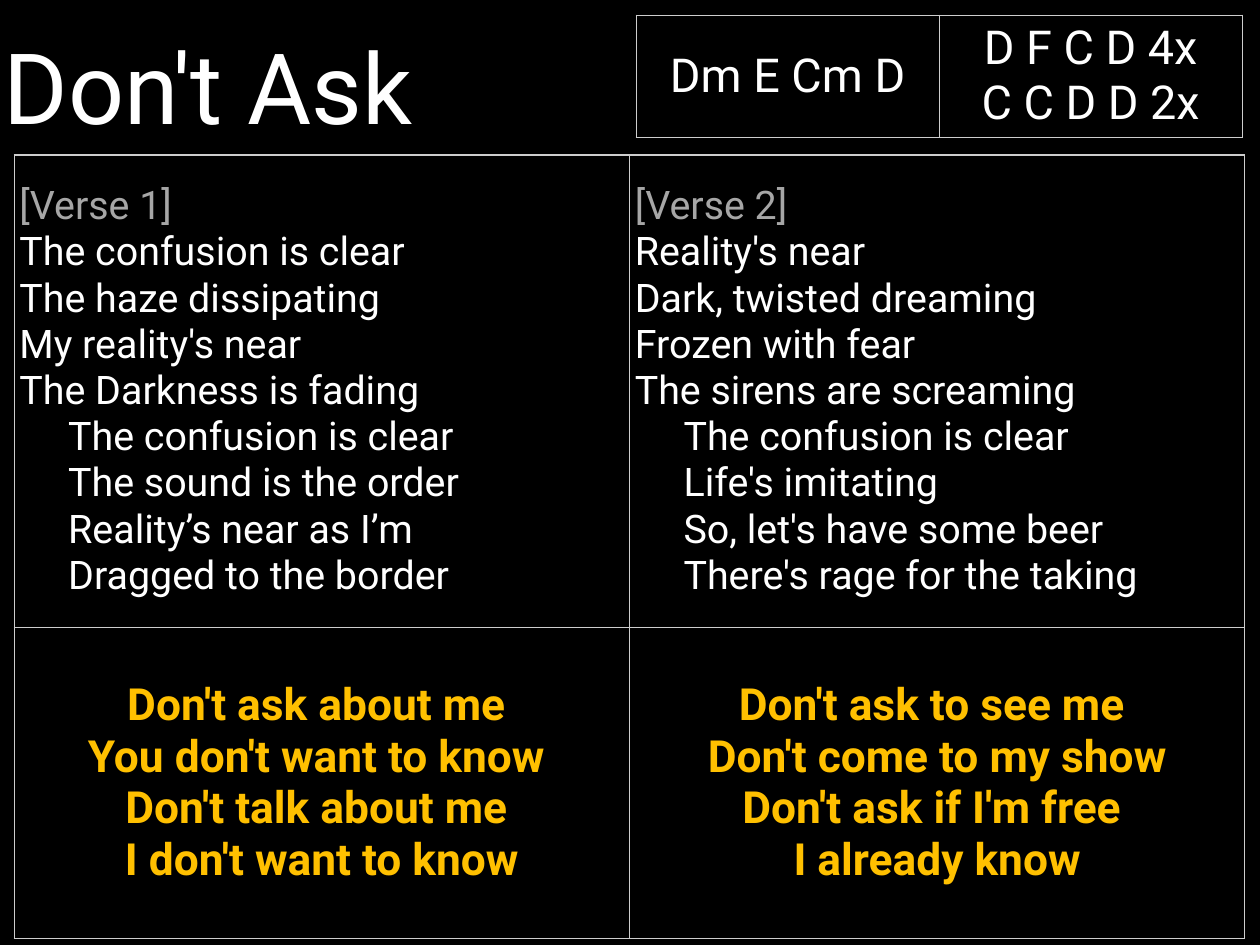
from dataclasses import dataclass
from lxml.etree import SubElement
from pptx import Presentation
from pptx.dml.color import RGBColor as RGB
from pptx.enum.text import MSO_ANCHOR as Anchor, MSO_AUTO_SIZE as Fit, PP_ALIGN as Align
from pptx.oxml.ns import qn
from pptx.util import Inches, Pt


@dataclass(frozen=True)
class Style:
    size: int
    color: str = "FFFFFF"
    bold: bool = False
    align: Align = Align.LEFT
    indent: float = 0


@dataclass(frozen=True)
class Theme:
    font: str = "Roboto"
    back: str = "000000"
    rule: str = "CDCDCD"
    rule_width: float = 1
    pad: float = 0.06
    title: Style = Style(80)
    chord: Style = Style(38, align=Align.CENTER)
    label: Style = Style(32, "A6A6A6")
    verse: Style = Style(32)
    echo: Style = Style(32, indent=0.55)
    chorus: Style = Style(36, "FFC000", True, Align.CENTER)


class Sheet:
    def __init__(self, slide, theme):
        self.slide, self.theme = slide, theme
        fill = slide.background.fill
        fill.solid()
        fill.fore_color.rgb = RGB.from_string(theme.back)

    def lyrics(self, frame, parts):
        """Fill a text frame from (style, lines) parts, one paragraph a line."""
        rows = [(style, line) for style, lines in parts for line in lines]
        frame.text = "\n".join(line for _, line in rows)
        for para, (style, _) in zip(frame.paragraphs, rows):
            para.alignment = style.align
            if style.indent:
                para._p.get_or_add_pPr().set("marL", str(Inches(style.indent)))
            for run in para.runs:
                font = run.font
                font.name, font.size, font.bold = self.theme.font, Pt(style.size), style.bold
                font.color.rgb = RGB.from_string(style.color)

    def title(self, text, left, top, width, height):
        box = self.slide.shapes.title
        box.left, box.top = Inches(left), Inches(top)
        box.width, box.height = Inches(width), Inches(height)
        frame = box.text_frame
        frame.margin_left = frame.margin_right = frame.margin_top = frame.margin_bottom = 0
        frame.word_wrap, frame.auto_size = True, Fit.NONE
        frame.vertical_anchor = Anchor.MIDDLE
        self.lyrics(frame, [(self.theme.title, [text])])

    def border(self, cell):
        props = cell._tc.get_or_add_tcPr()
        for spot, side in enumerate(("lnL", "lnR", "lnT", "lnB")):
            line = SubElement(props, qn(f"a:{side}"), w=str(Pt(self.theme.rule_width)))
            paint = SubElement(line, qn("a:solidFill"))
            SubElement(paint, qn("a:srgbClr"), val=self.theme.rule)
            props.insert(spot, line)

    def table(self, left, top, width, heights, cells):
        count = len(cells[0])
        grid = self.slide.shapes.add_table(
            len(cells), count, Inches(left), Inches(top),
            Inches(width), Inches(sum(heights))).table
        grid.first_row = grid.horz_banding = False
        for col in grid.columns:
            col.width = Inches(width / count)
        for row, height, parts in zip(grid.rows, heights, cells):
            row.height = Inches(height)
            for cell, part in zip(row.cells, parts):
                self.cell(cell, part)

    def cell(self, cell, parts):
        pad = Inches(self.theme.pad)
        cell.margin_left = cell.margin_right = cell.margin_top = cell.margin_bottom = pad
        cell.vertical_anchor = Anchor.MIDDLE
        cell.fill.background()
        self.border(cell)
        self.lyrics(cell.text_frame, parts)


def main():
    deck = Presentation()
    deck.slide_width, deck.slide_height = Inches(14.22), Inches(10.67)
    look = Theme()
    sheet = Sheet(deck.slides.add_slide(deck.slide_layouts[5]), look)

    sheet.title("Don't Ask", 0.04, 0.06, 8.07, 1.81)

    chords = [["Dm E Cm D"], ["D F C D 4x", "C C D D 2x"]]
    sheet.table(7.18, 0.17, 6.84, [1.38],
                [[[(look.chord, lines)] for lines in chords]])

    verses = [
        ("[Verse 1]",
         ["The confusion is clear", "The haze dissipating",
          "My reality's near", "The Darkness is fading"],
         ["The confusion is clear", "The sound is the order",
          "Reality’s near as I’m", "Dragged to the border"]),
        ("[Verse 2]",
         ["Reality's near", "Dark, twisted dreaming",
          "Frozen with fear", "The sirens are screaming"],
         ["The confusion is clear", "Life's imitating",
          "So, let's have some beer", "There's rage for the taking"]),
    ]
    choruses = [
        ["Don't ask about me ", "You don't want to know ",
         "Don't talk about me ", "I don't want to know"],
        ["Don't ask to see me ", "Don't come to my show",
         "Don't ask if I'm free ", "I already know"],
    ]
    sheet.table(0.16, 1.75, 13.89, [5.33, 3.52], [
        [[(look.label, [label]), (look.verse, lines), (look.echo, echo)]
         for label, lines, echo in verses],
        [[(look.chorus, lines)] for lines in choruses],
    ])

    deck.save("out.pptx")


if __name__ == "__main__":
    main()
